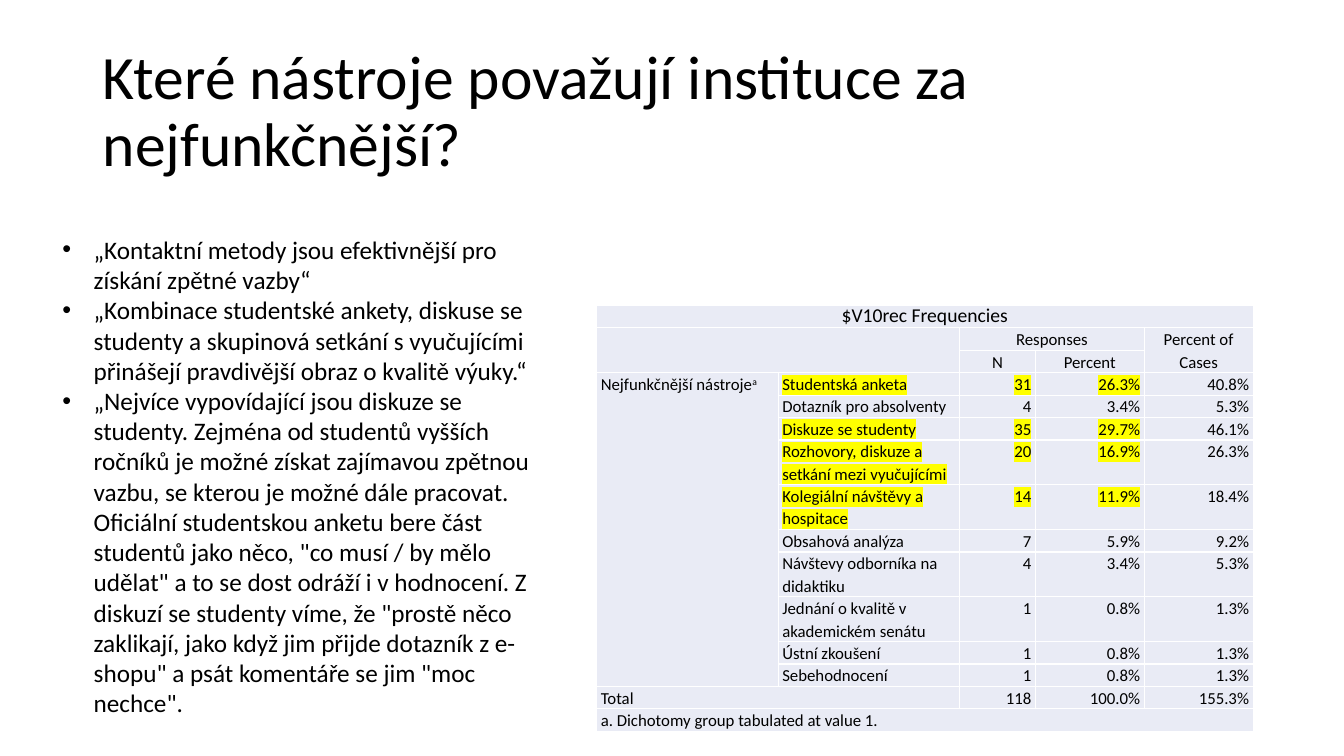
import pptx
import pptx.util
import pptx.dml.color
import pptx.enum.text
import pptx.oxml.ns
import lxml.etree

Inches = pptx.util.Inches
Pt = pptx.util.Pt
Align = pptx.enum.text.PP_ALIGN
Anchor = pptx.enum.text.MSO_ANCHOR
BLACK = pptx.dml.color.RGBColor(0, 0, 0)
PALE = pptx.dml.color.RGBColor(0xE9, 0xEB, 0xF5)
YELLOW = pptx.dml.color.RGBColor(0xFF, 0xFF, 0)

WIDE, HIGH = 13.33, 7.5
FACE = "Calibri"
LINE = 16
COLS = (1.8, 1.8, 0.75, 1.08, 1.08)
SPANS = ((0, 0, 0, 4), (1, 0, 2, 1), (1, 2, 1, 3), (1, 4, 2, 4),
         (3, 0, 12, 0), (13, 0, 13, 1), (14, 0, 14, 4))

TITLE = "Které nástroje považují instituce za nejfunkčnější?"
QUOTES = (
    "„Kontaktní metody jsou efektivnější pro získání zpětné vazby“",
    "„Kombinace studentské ankety, diskuse se studenty a skupinová setkání "
    "s vyučujícími přinášejí pravdivější obraz o kvalitě výuky.“",
    "„Nejvíce vypovídající jsou diskuze se studenty. Zejména od studentů "
    "vyšších ročníků je možné získat zajímavou zpětnou vazbu, se kterou je "
    "možné dále pracovat. Oficiální studentskou anketu bere část studentů "
    "jako něco, \"co musí / by mělo udělat\" a to se dost odráží i v "
    "hodnocení. Z diskuzí se studenty víme, že \"prostě něco zaklikají, jako "
    "když jim přijde dotazník z e-shopu\" a psát komentáře se jim \"moc "
    "nechce\".",
)
ROWS = (
    ("$V10rec Frequencies", "", "", "", ""),
    ("", "", "Responses", "", "Percent of Cases"),
    ("", "", "N", "Percent", ""),
    ("Nejfunkčnější nástroje", "Studentská anketa", "31", "26.3%", "40.8%"),
    ("", "Dotazník pro absolventy", "4", "3.4%", "5.3%"),
    ("", "Diskuze se studenty", "35", "29.7%", "46.1%"),
    ("", "Rozhovory, diskuze a setkání mezi vyučujícími", "20", "16.9%", "26.3%"),
    ("", "Kolegiální návštěvy a hospitace", "14", "11.9%", "18.4%"),
    ("", "Obsahová analýza", "7", "5.9%", "9.2%"),
    ("", "Návštevy odborníka na didaktiku", "4", "3.4%", "5.3%"),
    ("", "Jednání o kvalitě v akademickém senátu", "1", "0.8%", "1.3%"),
    ("", "Ústní zkoušení", "1", "0.8%", "1.3%"),
    ("", "Sebehodnocení", "1", "0.8%", "1.3%"),
    ("Total", "", "118", "100.0%", "155.3%"),
    ("a. Dichotomy group tabulated at value 1.", "", "", "", ""),
)
MARKED = (3, 5, 6, 7)


def place(shape, box):
    shape.left, shape.top, shape.width, shape.height = map(Inches, box)


def style(font, size):
    font.name = FACE
    font.size = Pt(size)
    font.color.rgb = BLACK


def indent(para, **sides):
    props = para._p.get_or_add_pPr()
    for name, size in sides.items():
        props.set(name, str(Inches(size)))


def mark(run):
    tag = pptx.oxml.ns.qn("a:highlight")
    glow = lxml.etree.SubElement(run._r.get_or_add_rPr(), tag)
    tone = lxml.etree.SubElement(glow, pptx.oxml.ns.qn("a:srgbClr"))
    tone.set("val", str(YELLOW))


def add_title(shape, box):
    place(shape, box)
    frame = shape.text_frame
    frame.text = TITLE
    frame.vertical_anchor = Anchor.MIDDLE
    frame.auto_size = pptx.enum.text.MSO_AUTO_SIZE.NONE
    para = frame.paragraphs[0]
    para.alignment = Align.LEFT
    para.line_spacing = 0.9
    style(para.font, 44)


def add_quotes(shape, box):
    place(shape, box)
    frame = shape.text_frame
    frame.text = "\n".join(QUOTES)
    frame.auto_size = pptx.enum.text.MSO_AUTO_SIZE.SHAPE_TO_FIT_TEXT
    for para in frame.paragraphs:
        indent(para, marL=0.31, indent=-0.31)
        para.space_before = Pt(0)
        style(para.font, 18)


def fill_cell(cell, text, row, col):
    cell.fill.solid()
    cell.fill.fore_color.rgb = PALE
    cell.margin_left = cell.margin_right = 0
    cell.margin_top = cell.margin_bottom = 0
    if row < 3:
        cell.vertical_anchor = Anchor.BOTTOM if row else Anchor.MIDDLE
    para = cell.text_frame.paragraphs[0]
    indent(para, marL=0.04, marR=0.04, indent=0)
    para.line_spacing = Pt(LINE)
    if row < 3:
        para.alignment = Align.CENTER
    elif col > 1:
        para.alignment = Align.RIGHT
    style(para.font, 12 if row else 14)
    if text:
        run = para.add_run()
        run.text = text
        if row in MARKED and 0 < col < 4:
            mark(run)


def add_counts(slide, box):
    shape = slide.shapes.add_table(len(ROWS), len(COLS), *map(Inches, box))
    table = shape.table
    table.first_row = table.horz_banding = False
    for column, width in zip(table.columns, COLS):
        column.width = Inches(width)
    for row, texts in enumerate(ROWS):
        table.rows[row].height = Pt(LINE)
        for col, text in enumerate(texts):
            fill_cell(table.cell(row, col), text, row, col)
    for top, left, low, right in SPANS:
        table.cell(top, left).merge(table.cell(low, right))
    note = table.cell(3, 0).text_frame.paragraphs[0].add_run()
    note.text = "a"
    note._r.get_or_add_rPr().set("baseline", "30000")


def main():
    deck = pptx.Presentation()
    deck.slide_width, deck.slide_height = Inches(WIDE), Inches(HIGH)
    slide = deck.slides.add_slide(deck.slide_layouts[1])
    title, body = slide.placeholders
    add_title(title, (0.069 * WIDE, 0.053 * HIGH, 0.863 * WIDE, 0.193 * HIGH))
    add_counts(slide, (0.444 * WIDE, 0.404 * HIGH, sum(COLS), len(ROWS) * LINE / 72))
    add_quotes(body, (0.039 * WIDE, 0.303 * HIGH, 0.377 * WIDE, 0.74 * HIGH))
    deck.save("out.pptx")


if __name__ == "__main__":
    main()
